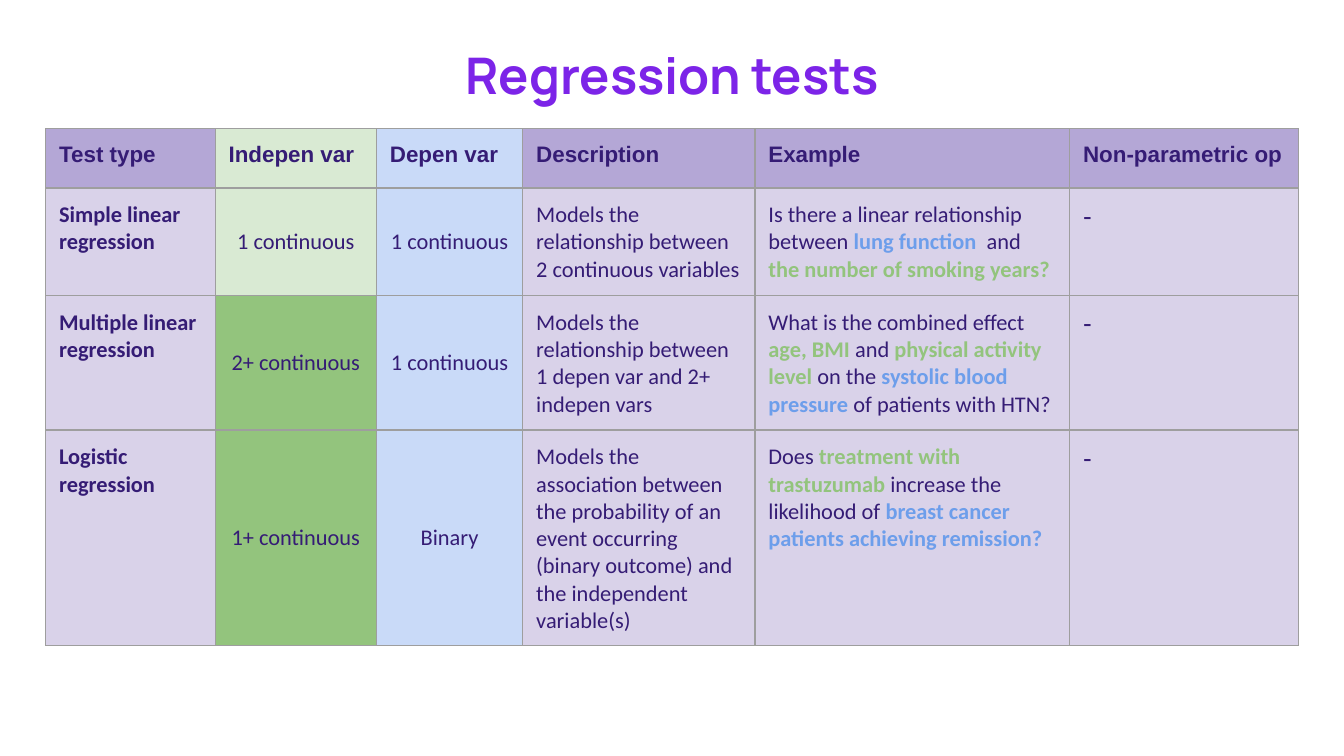
"""Build a slide of regression tests, with a table for the head and one for each test."""
import pptx
import pptx.dml.color
import pptx.enum.text
import pptx.oxml
import pptx.oxml.ns
import pptx.util

Pt = pptx.util.Pt
ALIGN = pptx.enum.text.PP_ALIGN
ANCHOR = pptx.enum.text.MSO_ANCHOR

HUES = {
    "title": "7C24E8", "ink": "351C75", "rule": "9E9E9E",
    "head": "B4A7D6", "body": "D9D2E9", "pale": "D9EAD3",
    "green": "93C47D", "sky": "C9DAF8", "blue": "6D9EEB",
}
TITLE = "Regression tests"
HEADS = ["Test type", "Indepen var", "Depen var", "Description", "Example", "Non-parametric op"]
TESTS = [
    ["Simple linear regression", "1 continuous", "1 continuous",
     "Models the relationship between 2 continuous variables",
     [("Is there a linear relationship between ", "ink"), ("lung function  ", "blue"),
      ("and ", "ink"), ("the number of smoking years?", "green")], "-"],
    ["Multiple linear regression", "2+ continuous", "1 continuous",
     "Models the relationship between 1 depen var and 2+ indepen vars",
     [("What is the combined effect ", "ink"), ("age, BMI ", "green"), ("and", "ink"),
      (" physical activity level ", "green"), ("on the ", "ink"),
      ("systolic blood pressure ", "blue"), ("of patients with HTN?", "ink")], "-"],
    ["Logistic regression", "1+ continuous", "Binary",
     "Models the association between the probability of an event occurring "
     "(binary outcome) and the independent variable(s)",
     [("Does ", "ink"), ("treatment with trastuzumab ", "green"),
      ("increase the likelihood of ", "ink"),
      ("breast cancer patients achieving remission?", "blue")], "-"],
]
VARS = [("pale", "sky"), ("pale", "sky"), ("green", "sky"), ("green", "sky")]
WIDTHS = [90.8, 86.4, 78.4, 124.4, 168.6, 122.5]
TOPS = [69, 100.7, 158.3, 230.4]
HEIGHTS = [31.7, 30, 30, 30]
LEFT, PAD, SIDE = 24.5, 7.2, 236.2


def write(frame, text, size=12, font="Calibri", hue="ink", bold=False, align=ALIGN.LEFT):
    para = frame.paragraphs[0]
    para.alignment = align
    parts = [(text, hue)] if isinstance(text, str) else text
    for words, tint in parts:
        run = para.add_run()
        run.text = words
        run.font.size = Pt(size)
        run.font.name = font
        run.font.bold = bold or tint in ("green", "blue")
        run.font.color.rgb = pptx.dml.color.RGBColor.from_string(HUES[tint])


def pad(box):
    box.margin_left = box.margin_right = box.margin_top = box.margin_bottom = Pt(PAD)


def style(cell, fill):
    pad(cell)
    props = cell._tc.get_or_add_tcPr()
    for side in "LRTB":
        props.append(pptx.oxml.parse_xml(
            f'<a:ln{side} {pptx.oxml.ns.nsdecls("a")} w="{Pt(0.75)}"><a:solidFill>'
            f'<a:srgbClr val="{HUES["rule"]}"/></a:solidFill></a:ln{side}>'))
    cell.fill.solid()
    cell.fill.fore_color.rgb = pptx.dml.color.RGBColor.from_string(HUES[fill])


def look(row, col):
    if row == 0:
        return {"font": "Arial", "bold": True}
    if col == 0:
        return {"bold": True}
    if col in (1, 2):
        return {"align": ALIGN.CENTER}
    if col == 5:
        return {"size": 14, "font": "Arial"}
    return {}


def main():
    deck = pptx.Presentation()
    deck.slide_width, deck.slide_height = Pt(720), Pt(405)
    slide = deck.slides.add_slide(deck.slide_layouts[6])

    frame = slide.shapes.add_textbox(Pt(LEFT), Pt(15.3), Pt(sum(WIDTHS)), Pt(49)).text_frame
    frame.word_wrap = True
    frame.vertical_anchor = ANCHOR.MIDDLE
    pad(frame)
    write(frame, TITLE, size=27, font="Manrope", hue="title", bold=True, align=ALIGN.CENTER)

    for row, texts in enumerate([HEADS] + TESTS):
        grid = slide.shapes.add_table(
            1, len(WIDTHS), Pt(LEFT), Pt(TOPS[row]), Pt(SIDE), Pt(SIDE))
        table = grid.table
        table.first_row = table.horz_banding = False
        table.rows[0].height = Pt(HEIGHTS[row])
        base = "body" if row else "head"
        fills = [base, *VARS[row], base, base, base]
        for col, text in enumerate(texts):
            table.columns[col].width = Pt(WIDTHS[col])
            cell = table.cell(0, col)
            style(cell, fills[col])
            if row and col in (1, 2):
                cell.vertical_anchor = ANCHOR.MIDDLE
            write(cell.text_frame, text, **look(row, col))
        grid.width = grid.height = Pt(SIDE)

    deck.save("out.pptx")


if __name__ == "__main__":
    main()
